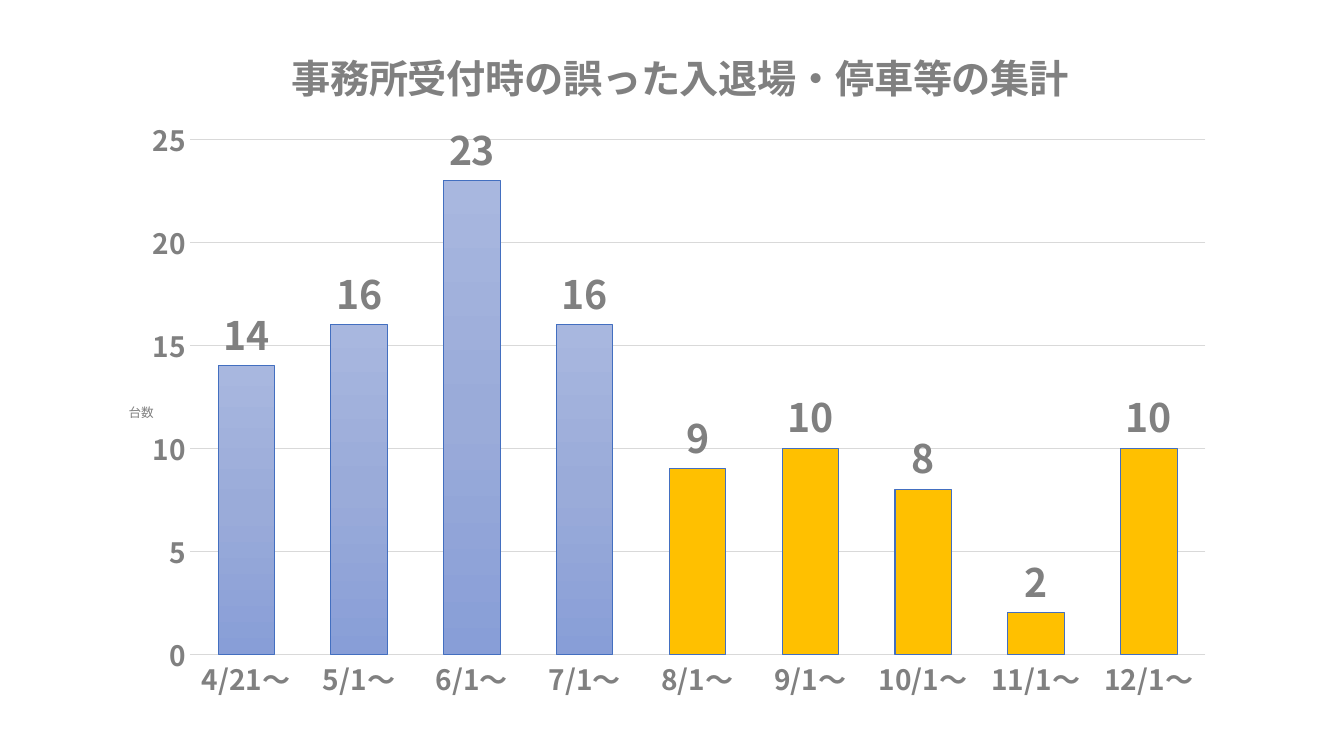
from lxml import etree
from pptx import Presentation
from pptx import util as u
from pptx.chart import data
from pptx.dml import color
from pptx.enum import chart as en
from pptx.oxml import ns

GRAY = color.RGBColor(0x80, 0x80, 0x80)
PALE = color.RGBColor(0xD9, 0xD9, 0xD9)
GOLD = color.RGBColor(0xFF, 0xC0, 0x00)
BLUE = color.RGBColor(0x43, 0x6F, 0xC0)
FADE = ["A8B7DF", "9AABD9", "889ED7"]
FACE = "Noto Sans CJK JP"


def style(font, size, bold=True):
    font.name = FACE
    font.size = u.Pt(size)
    font.bold = bold
    font.color.rgb = GRAY


def place(node, at, **spots):
    lay = node.find(ns.qn("c:layout"))
    if lay is None:
        lay = etree.Element(ns.qn("c:layout"))
        node.insert(at, lay)
    man = etree.SubElement(lay, ns.qn("c:manualLayout"))
    for key, val in spots.items():
        etree.SubElement(man, ns.qn("c:" + key)).set("val", str(val))


prs = Presentation()
prs.slide_width = u.Pt(960)
prs.slide_height = u.Pt(540)
slide = prs.slides.add_slide(prs.slide_layouts[6])

info = data.CategoryChartData()
info.categories = ["4/21～", "5/1～", "6/1～", "7/1～", "8/1～",
                   "9/1～", "10/1～", "11/1～", "12/1～"]
info.add_series("台数", [14, 16, 23, 16, 9, 10, 8, 2, 10])
chart = slide.shapes.add_chart(
    en.XL_CHART_TYPE.COLUMN_CLUSTERED, u.Pt(87.84), u.Pt(20.88),
    u.Pt(784.08), u.Pt(498.24), info).chart
chart.has_legend = False
style(chart.font, 10, False)

months = chart.category_axis
count = chart.value_axis
count.minimum_scale = 0
count.maximum_scale = 25
count.major_unit = 5
count.has_major_gridlines = True
for axis in (months, count):
    axis.major_tick_mark = en.XL_TICK_MARK.NONE
    axis.minor_tick_mark = en.XL_TICK_MARK.NONE
    style(axis.tick_labels.font, 20)
for line in (months.format.line, count.major_gridlines.format.line):
    line.color.rgb = PALE
    line.width = u.Pt(0.75)
count.format.line.fill.background()

chart.has_title = True
count.has_title = True
heads = [(chart.chart_title, "事務所受付時の誤った入退場・停車等の集計", 28, True, 0.147, 0.01),
         (count.axis_title, "台数", 9, False, 0.003, 0.53)]
for head, words, size, bold, x, y in heads:
    frame = head.text_frame
    frame.text = words
    style(frame.paragraphs[0].runs[0].font, size, bold)
    body = frame._txBody.find(ns.qn("a:bodyPr"))
    body.set("rot", "0")
    body.set("vert", "horz")
    place(head._element, 1, xMode="edge", yMode="edge", x=x, y=y)
place(chart._chartSpace.chart.plotArea, 0, layoutTarget="inner",
      xMode="edge", yMode="edge", x=0.061, y=0.158, w=0.925, h=0.738)

plot = chart.plots[0]
plot.gap_width = 100
plot.overlap = -24
plot.vary_by_categories = False
bars = plot.series[0]
bars.invert_if_negative = False
bars.format.fill.gradient()
grad = bars.format.fill._xPr.find(ns.qn("a:gradFill"))
for part in list(grad):
    grad.remove(part)
stops = etree.SubElement(grad, ns.qn("a:gsLst"))
for i, tone in enumerate(FADE):
    stop = etree.SubElement(stops, ns.qn("a:gs"), pos=str(i * 50000))
    etree.SubElement(stop, ns.qn("a:srgbClr"), val=tone)
etree.SubElement(grad, ns.qn("a:lin"), ang="5400000", scaled="0")

late = [bars.points[i].format for i in range(4, 9)]
for form in late:
    form.fill.solid()
    form.fill.fore_color.rgb = GOLD
for form in [bars.format] + late:
    form.line.color.rgb = BLUE
    form.line.width = u.Pt(0.75)

labels = bars.data_labels
labels.show_value = True
labels.position = en.XL_LABEL_POSITION.OUTSIDE_END
style(labels.font, 28)

for latin in list(chart._chartSpace.iter(ns.qn("a:latin"))):
    east = etree.Element(ns.qn("a:ea"), typeface=FACE)
    latin.addnext(east)

prs.save("out.pptx")
